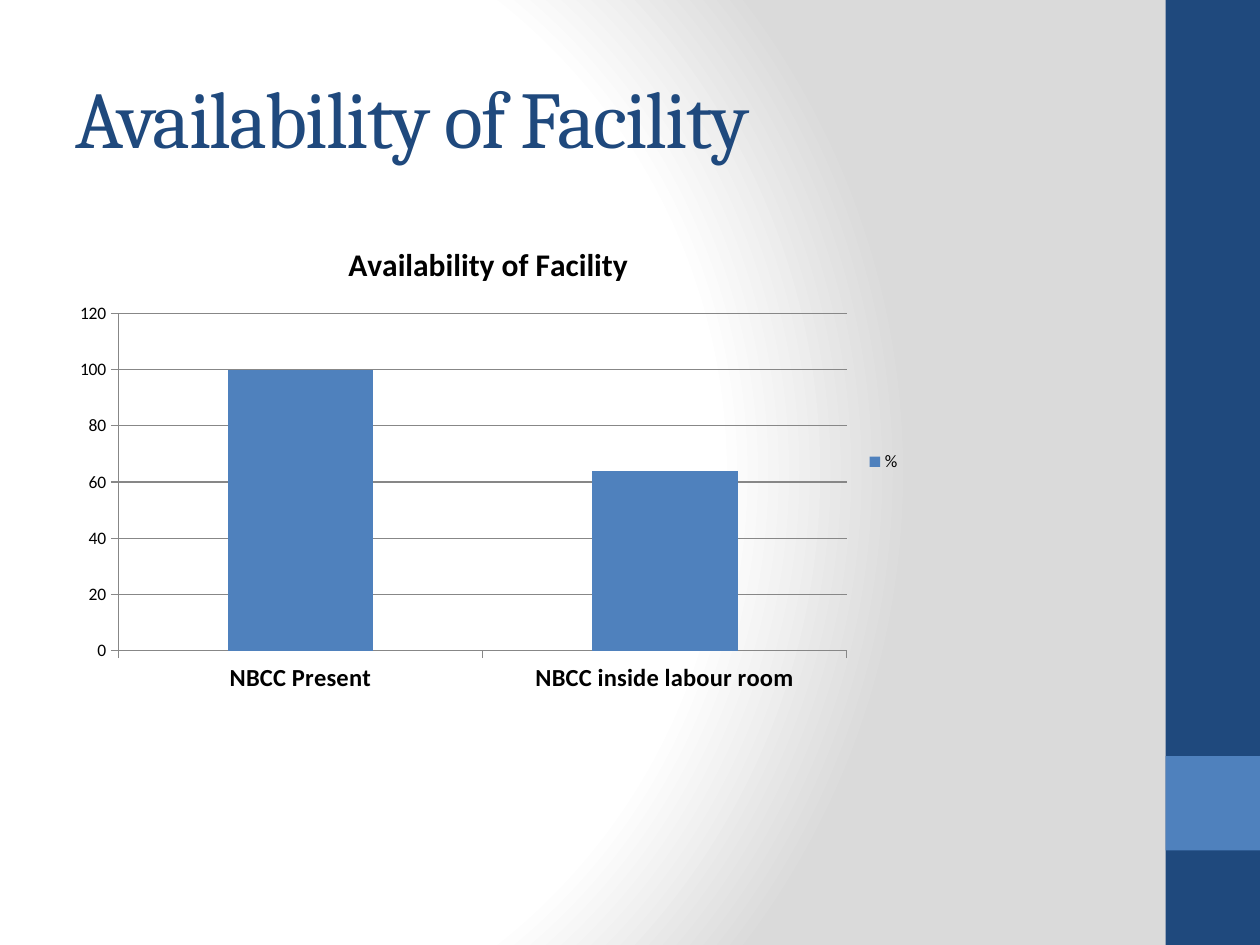
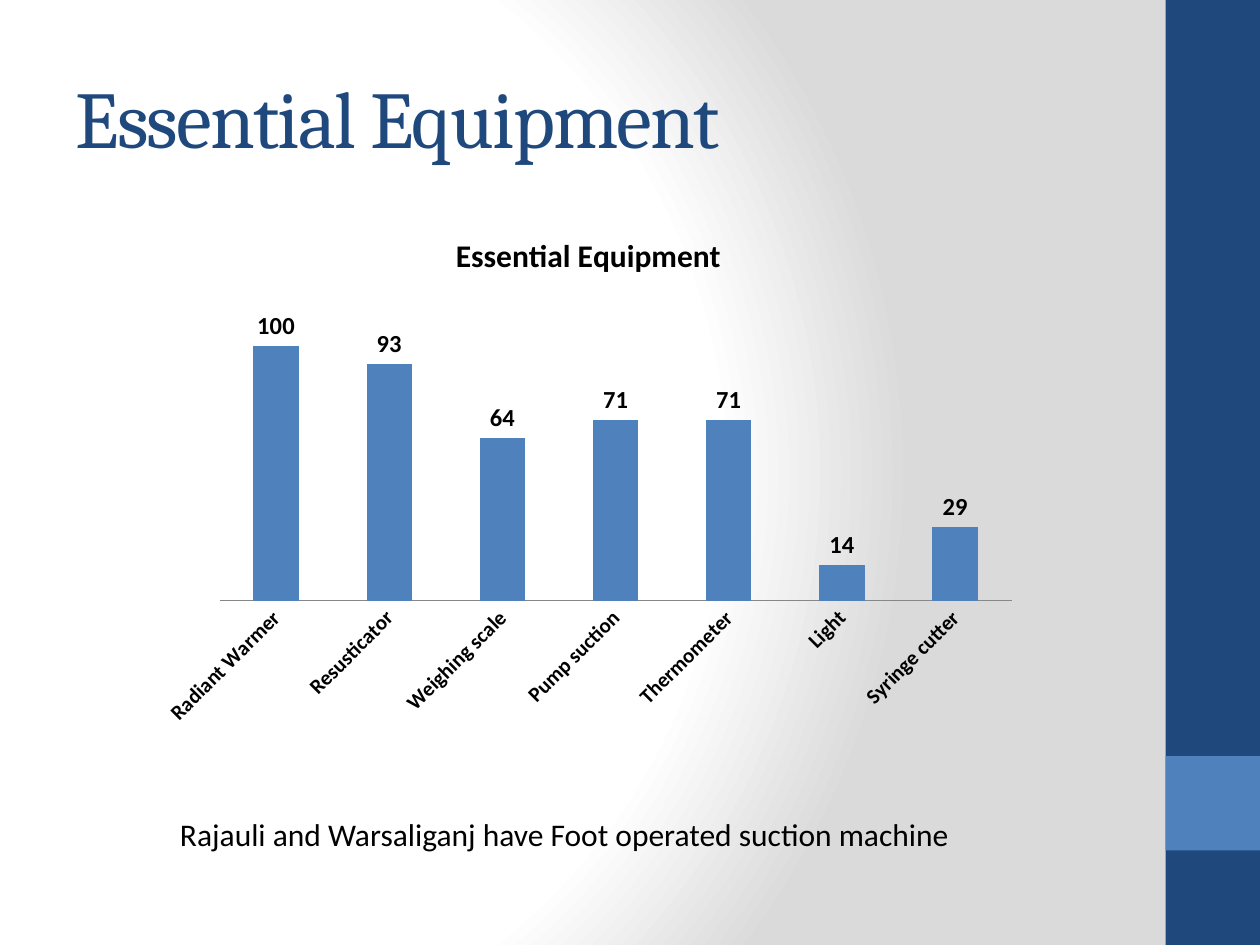
from dataclasses import dataclass

from pptx import Presentation
from pptx import util as u
from pptx.chart.data import CategoryChartData
from pptx.dml.color import RGBColor
from pptx.enum import chart as charts, shapes, text
from pptx.oxml import parse_xml
from pptx.oxml.ns import nsdecls, qn


@dataclass(frozen=True)
class Theme:
    navy: str = "1F497D"
    blue: str = "4F81BD"
    black: str = "000000"
    axis: str = "878787"
    white: str = "FFFFFF"
    grey: str = "DADADA"
    heading_font: str = "Cambria"
    body_font: str = "Calibri"
    heading_size: int = 46
    chart_title_size: int = 18
    note_size: int = 18
    label_size: int = 14
    chart_size: int = 10


THEME = Theme()
SLIDE_WIDTH, SLIDE_HEIGHT, BAND_WIDTH = 720, 540, 54
TITLE_BOX = (36, 21.6, 600, 90)

SLIDES = [
    {
        "title": "Availability of Facility",
        "box": (36, 126, 486, 275.76),
        "series": "%",
        "values": {"NBCC Present": 100, "NBCC inside labour room": 64},
        "category_size": 14,
        "value_axis": True,
    },
    {
        "title": "Essential Equipment",
        "box": (84.24, 120.24, 504, 300.24),
        "series": "Series 1",
        "values": {
            "Radiant Warmer": 100,
            "Resusticator": 93,
            "Weighing scale": 64,
            "Pump suction": 71,
            "Thermometer": 71,
            "Light": 14,
            "Syringe cutter": 29,
        },
        "category_size": 12,
        "category_angle": -45,
        "overlap": -25,
        "value_axis": False,
        "note": "Rajauli and Warsaliganj have Foot operated suction machine",
        "note_box": (95.76, 462.24, 459.36, 28.8),
    },
]


def points(box):
    return [u.Pt(length) for length in box]


def style_font(font, size, bold=False, name=THEME.body_font, color=THEME.black):
    font.name, font.size, font.bold = name, u.Pt(size), bold
    font.color.rgb = RGBColor.from_string(color)


def set_background(slide):
    stops = ((0, THEME.white), (75, THEME.white), (100, THEME.grey))
    stop_xml = "".join(
        f'<a:gs pos="{position * 1000}"><a:srgbClr val="{color}"/></a:gs>'
        for position, color in stops
    )
    background = parse_xml(
        f'<p:bg {nsdecls("p", "a")}><p:bgPr><a:gradFill rotWithShape="1">'
        f'<a:gsLst>{stop_xml}</a:gsLst><a:path path="circle">'
        '<a:fillToRect l="20000" t="50000" r="100000" b="50000"/></a:path>'
        "</a:gradFill><a:effectLst/></p:bgPr></p:bg>"
    )
    slide.element.find(qn("p:cSld")).insert(0, background)


def add_band(slide, top, height, color):
    band = slide.shapes.add_shape(
        shapes.MSO_SHAPE.RECTANGLE,
        *points((SLIDE_WIDTH - BAND_WIDTH, top, BAND_WIDTH, height)),
    )
    band.shadow.inherit = False
    band.fill.solid()
    band.fill.fore_color.rgb = RGBColor.from_string(color)
    band.line.fill.background()


def add_text(slide, box, words):
    """Add a one-run text box; return its frame and run."""
    frame = slide.shapes.add_textbox(*points(box)).text_frame
    run = frame.paragraphs[0].add_run()
    run.text = words
    return frame, run


def add_title(slide, words):
    frame, run = add_text(slide, TITLE_BOX, words)
    frame.word_wrap = True
    frame.vertical_anchor = text.MSO_ANCHOR.MIDDLE
    style_font(run.font, THEME.heading_size, name=THEME.heading_font, color=THEME.navy)
    run.font._element.set("spc", "-100")


def add_note(slide, box, words):
    frame, run = add_text(slide, box, words)
    frame.word_wrap = False
    frame.auto_size = text.MSO_AUTO_SIZE.SHAPE_TO_FIT_TEXT
    style_font(run.font, THEME.note_size)


def style_line(line):
    line.color.rgb = RGBColor.from_string(THEME.axis)
    line.width = u.Pt(0.75)


def style_axes(chart, content):
    shows_values = content["value_axis"]
    tick = charts.XL_TICK_MARK.OUTSIDE if shows_values else charts.XL_TICK_MARK.NONE
    for axis in (chart.category_axis, chart.value_axis):
        axis.major_tick_mark = tick
        axis.minor_tick_mark = charts.XL_TICK_MARK.NONE
        style_line(axis.format.line)

    labels = chart.category_axis.tick_labels
    style_font(labels.font, content["category_size"], bold=True)
    if "category_angle" in content:
        body = chart.category_axis._element.find(qn("c:txPr")).find(qn("a:bodyPr"))
        body.set("rot", str(content["category_angle"] * 60000))

    value_axis = chart.value_axis
    value_axis.minimum_scale, value_axis.maximum_scale = 0, 120
    value_axis.major_unit = 20
    value_axis.visible = shows_values
    value_axis.has_major_gridlines = shows_values
    value_axis.tick_labels.number_format = "0"
    value_axis.tick_labels.number_format_is_linked = False
    if shows_values:
        style_line(value_axis.major_gridlines.format.line)


def add_value_labels(plot):
    plot.has_data_labels = True
    labels = plot.data_labels
    labels.show_value = True
    labels.number_format, labels.number_format_is_linked = "0", False
    labels.position = charts.XL_LABEL_POSITION.OUTSIDE_END
    style_font(labels.font, THEME.label_size, bold=True)


def add_column_chart(slide, content):
    data = CategoryChartData(number_format="0")
    data.categories = list(content["values"])
    data.add_series(content["series"], list(content["values"].values()))
    chart = slide.shapes.add_chart(
        charts.XL_CHART_TYPE.COLUMN_CLUSTERED, *points(content["box"]), data
    ).chart
    style_font(chart.font, THEME.chart_size)

    chart.has_title = True
    run = chart.chart_title.text_frame.paragraphs[0].add_run()
    run.text = content["title"]
    style_font(run.font, THEME.chart_title_size, bold=True)
    chart.chart_title.include_in_layout = False

    plot = chart.plots[0]
    plot.vary_by_categories = False
    plot.gap_width = 150
    plot.overlap = content.get("overlap", 0)
    columns = plot.series[0].format.fill
    columns.solid()
    columns.fore_color.rgb = RGBColor.from_string(THEME.blue)

    style_axes(chart, content)
    chart.has_legend = content["value_axis"]
    if chart.has_legend:
        chart.legend.position = charts.XL_LEGEND_POSITION.RIGHT
        chart.legend.include_in_layout = False
    else:
        add_value_labels(plot)


def main():
    presentation = Presentation()
    presentation.slide_width = u.Pt(SLIDE_WIDTH)
    presentation.slide_height = u.Pt(SLIDE_HEIGHT)
    for content in SLIDES:
        slide = presentation.slides.add_slide(presentation.slide_layouts[6])
        set_background(slide)
        add_band(slide, 0, SLIDE_HEIGHT, THEME.navy)
        add_band(slide, 432, BAND_WIDTH, THEME.blue)
        add_title(slide, content["title"])
        add_column_chart(slide, content)
        if "note" in content:
            add_note(slide, content["note_box"], content["note"])
    presentation.save("out.pptx")


if __name__ == "__main__":
    main()
